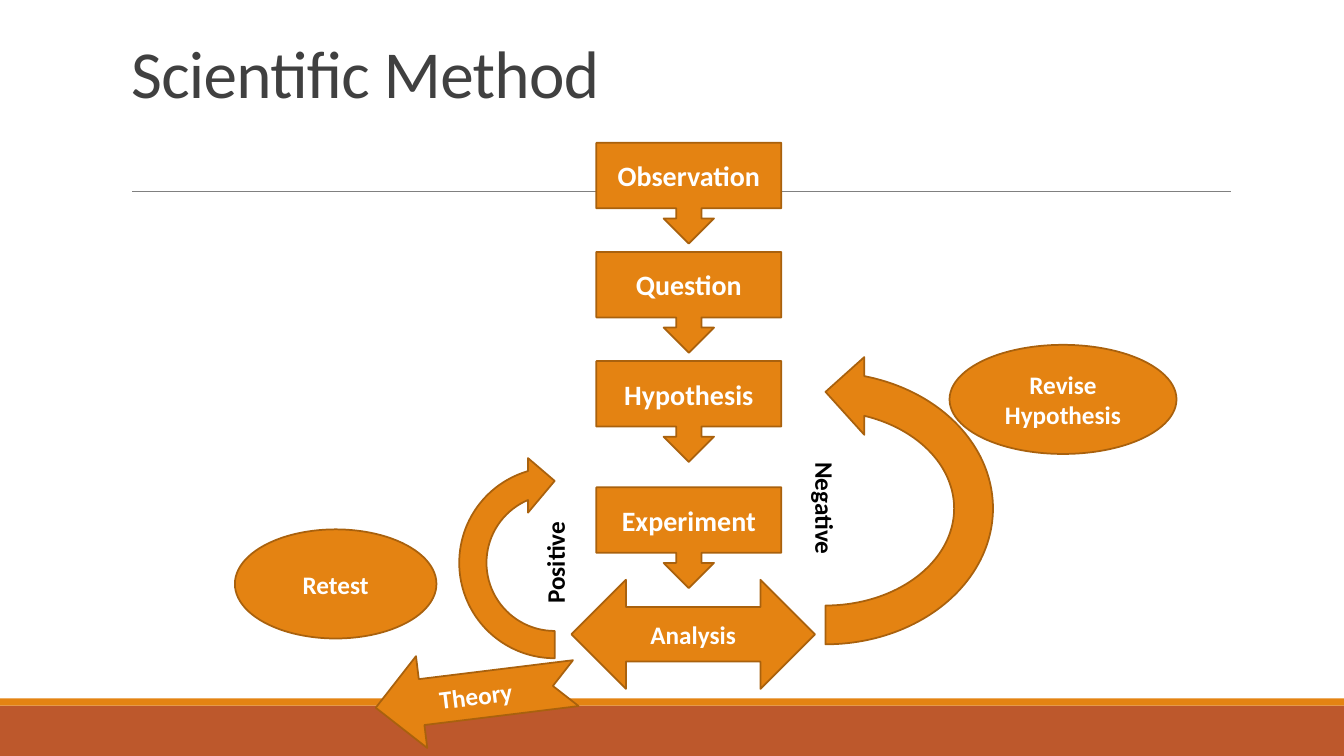
from dataclasses import dataclass

from lxml import etree
from pptx import Presentation
from pptx import util as u
from pptx.dml.color import RGBColor
from pptx.enum import shapes, text
from pptx.oxml.ns import qn

COLORS = {
    "orange": "E48312",
    "outline": "A9610D",
    "rust": "BD582C",
    "rule": "808080",
    "title": "404040",
    "white": "FFFFFF",
    "black": "000000",
}
FONT = "Calibri"
KIND = shapes.MSO_SHAPE


@dataclass(frozen=True)
class Node:
    """One labelled shape of the diagram; lengths in centimetres."""
    label: str
    kind: shapes.MSO_SHAPE
    left: float
    top: float
    width: float
    height: float
    size: int = 18
    color: str = "white"
    rotation: float = 0
    flip: str = ""


# Stages of the central chain, with their top edges
STAGES = {"Observation": 3.6, "Question": 6.35, "Hypothesis": 9.1, "Experiment": 12.28}
CHAIN = [
    Node(label, KIND.DOWN_ARROW_CALLOUT, 15.03, top, 4.66, 2.54, size=20)
    for label, top in STAGES.items()
]

# Analysis and the outcomes on either side
OUTCOMES = [
    Node("Analysis", KIND.LEFT_RIGHT_ARROW, 14.4, 14.61, 6.14, 2.75),
    Node("Positive", KIND.CIRCULAR_ARROW, 11.23, 11.43, 5.5, 5.5,
         color="black", rotation=270),
    Node("Retest", KIND.OVAL, 5.92, 13.34, 5.08, 2.75),
    Node("Negative", KIND.CIRCULAR_ARROW, 16.89, 8.1, 7.83, 9.42,
         color="black", rotation=90, flip="flipH"),
    Node("Revise\nHypothesis", KIND.OVAL, 23.93, 8.69, 5.72, 2.75),
    Node("Theory", KIND.NOTCHED_RIGHT_ARROW, 9.45, 16.36, 5.08, 2.33,
         rotation=173, flip="flipV"),
]


def rgb(name: str) -> RGBColor:
    return RGBColor.from_string(COLORS[name])


def add_band(page, top: float, width: int, height: float, color: str) -> None:
    band = page.shapes.add_shape(KIND.RECTANGLE, 0, u.Cm(top), width, u.Cm(height))
    band.shadow.inherit = False
    band.fill.solid()
    band.fill.fore_color.rgb = rgb(color)
    band.line.fill.background()


def add_rule(page) -> None:
    rule = page.shapes.add_connector(
        shapes.MSO_CONNECTOR.STRAIGHT, u.Cm(3.33), u.Cm(4.83), u.Cm(31.01), u.Cm(4.83))
    rule.line.color.rgb = rgb("rule")
    rule.line.width = u.Pt(0.5)
    etree.SubElement(rule.element.spPr, qn("a:effectLst"))


def format_title(title) -> None:
    title.left, title.top = u.Cm(3.05), u.Cm(0.79)
    title.width, title.height = u.Cm(27.94), u.Cm(2.16)
    frame = title.text_frame
    frame.text = "Scientific Method"
    frame.vertical_anchor = text.MSO_ANCHOR.BOTTOM
    frame.auto_size = text.MSO_AUTO_SIZE.NONE
    para = frame.paragraphs[0]
    para.alignment = text.PP_ALIGN.LEFT
    para.line_spacing = 0.85
    span = para.runs[0]
    span.font.name = FONT
    span.font.size = u.Pt(48)
    span.font.color.rgb = rgb("title")
    span.font.element.set("spc", "-50") if hasattr(span.font, "element") else \
        para.runs[0]._r.get_or_add_rPr().set("spc", "-50")


def add_node(page, node: Node) -> None:
    box = page.shapes.add_shape(
        node.kind, u.Cm(node.left), u.Cm(node.top), u.Cm(node.width), u.Cm(node.height))
    box.shadow.inherit = False
    box.rotation = node.rotation
    if node.flip:
        box.element.spPr.find(qn("a:xfrm")).set(node.flip, "1")
    box.fill.solid()
    box.fill.fore_color.rgb = rgb("orange")
    box.line.color.rgb = rgb("outline")
    box.line.width = u.Pt(1.25)
    frame = box.text_frame
    frame.text = node.label
    frame.word_wrap = True
    frame.vertical_anchor = text.MSO_ANCHOR.MIDDLE
    for para in frame.paragraphs:
        para.alignment = text.PP_ALIGN.CENTER
        for span in para.runs:
            span.font.name = FONT
            span.font.size = u.Pt(node.size)
            span.font.bold = True
            span.font.color.rgb = rgb(node.color)


def main() -> None:
    deck = Presentation()
    deck.slide_width, deck.slide_height = u.Cm(33.87), u.Cm(19.05)
    page = deck.slides.add_slide(deck.slide_layouts[5])

    # Footer bands, rule and title
    add_band(page, 17.78, deck.slide_width, 1.27, "rust")
    add_band(page, 17.6, deck.slide_width, 0.18, "orange")
    add_rule(page)
    format_title(page.shapes.title)

    # Diagram
    for node in CHAIN + OUTCOMES:
        add_node(page, node)

    deck.save("out.pptx")


if __name__ == "__main__":
    main()
